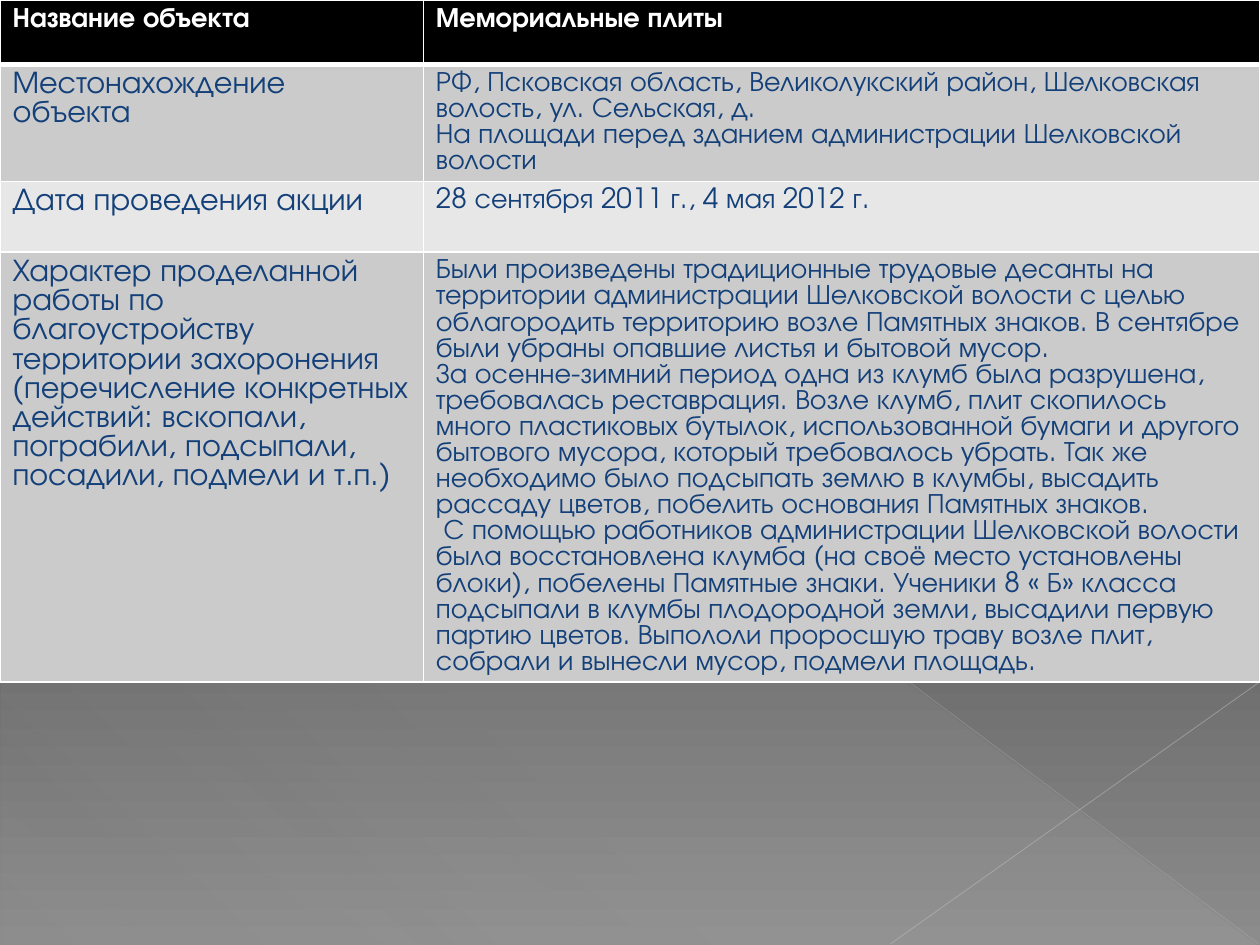
from lxml import etree
from pptx import Presentation
from pptx.dml.color import RGBColor
from pptx.enum.shapes import MSO_CONNECTOR, MSO_SHAPE
from pptx.oxml.ns import qn
from pptx.util import Inches, Pt

RIGHT_TRIANGLE = MSO_SHAPE.RIGHT_TRIANGLE
STRAIGHT = MSO_CONNECTOR.STRAIGHT

WHITE = RGBColor(0xFF, 0xFF, 0xFF)
BLACK = RGBColor(0x00, 0x00, 0x00)
NAVY = RGBColor(0x14, 0x40, 0x7A)
BAND_DARK = RGBColor(0xCB, 0xCB, 0xCB)
BAND_LIGHT = RGBColor(0xE7, 0xE7, 0xE7)
LINE_LONG = RGBColor(0xBF, 0xBF, 0xBF)
LINE_SHORT = RGBColor(0xC6, 0xC6, 0xC6)
TRIANGLE = RGBColor(0xD2, 0xD2, 0xD2)
GRAY_TOP = RGBColor(0x4A, 0x4A, 0x4A)
GRAY_MIDDLE = RGBColor(0x62, 0x62, 0x62)
GRAY_BOTTOM = RGBColor(0x8C, 0x8C, 0x8C)

COLUMN_WIDTHS = (3.36, 6.64)
ROW_HEIGHTS = (0.51, 0.93, 0.56, 3.41)
ROW_FILLS = (BLACK, BAND_DARK, BAND_LIGHT, BAND_DARK)
LABEL_SIZE = 18
BODY_SIZE = 16
LINE_RATIO = 0.93

ROWS = (
    ("Название объекта", ["Мемориальные плиты"]),
    ("Местонахождение объекта", [
        "РФ, Псковская область, Великолукский район, Шелковская волость, "
        "ул. Сельская, д.",
        "На площади перед зданием администрации Шелковской волости",
    ]),
    ("Дата проведения акции", ["28 сентября 2011 г., 4 мая 2012 г."]),
    ("Характер проделанной работы по благоустройству территории захоронения "
     "(перечисление конкретных действий: вскопали, пограбили, подсыпали, "
     "посадили, подмели и т.п.)", [
        "Были произведены традиционные трудовые десанты на территории "
        "администрации Шелковской волости с целью облагородить территорию "
        "возле Памятных знаков. В сентябре были убраны опавшие листья и "
        "бытовой мусор.\n"
        "За осенне-зимний период одна из клумб была разрушена, требовалась "
        "реставрация. Возле клумб, плит скопилось много пластиковых бутылок, "
        "использованной бумаги и другого бытового мусора, который требовалось "
        "убрать. Так же необходимо было подсыпать землю в клумбы, высадить "
        "рассаду цветов, побелить основания Памятных знаков.",
        " С помощью работников администрации Шелковской волости была "
        "восстановлена клумба (на своё место установлены блоки), побелены "
        "Памятные знаки. Ученики 8 « Б» класса подсыпали в клумбы плодородной "
        "земли, высадили первую партию цветов. Выпололи проросшую траву возле "
        "плит, собрали и вынесли мусор, подмели площадь.",
    ]),
)


def add_color(parent, color, opacity=100):
    element = etree.SubElement(parent, qn("a:srgbClr"), val=str(color))
    if opacity < 100:
        etree.SubElement(element, qn("a:alpha"), val=str(opacity * 1000))


class SlideBuilder:
    font_name = "TeX Gyre Adventor"

    def __init__(self, slide):
        self.slide = slide

    def gradient(self, fill, fill_parent, stops, angle):
        fill.gradient()
        gradient = fill_parent.find(qn("a:gradFill"))
        for child in list(gradient):
            gradient.remove(child)
        stop_list = etree.SubElement(gradient, qn("a:gsLst"))
        for position, color, opacity in stops:
            stop = etree.SubElement(stop_list, qn("a:gs"), pos=str(position * 1000))
            add_color(stop, color, opacity)
        etree.SubElement(gradient, qn("a:lin"), ang=str(angle * 60000), scaled="0")

    def background(self, stops, angle):
        fill = self.slide.background.fill
        fill.gradient()
        properties = self.slide.element.find(".//" + qn("p:bgPr"))
        self.gradient(fill, properties, stops, angle)

    def triangle(self, left, top, width, height, stops, angle):
        shape = self.slide.shapes.add_shape(
            RIGHT_TRIANGLE, Inches(left), Inches(top), Inches(width), Inches(height))
        shape.shadow.inherit = False
        shape.line.fill.background()
        self.gradient(shape.fill, shape.element.spPr, stops, angle)

    def line(self, start, end, color, width, opacity):
        connector = self.slide.shapes.add_connector(
            STRAIGHT, *(Inches(value) for value in start + end))
        connector.line.width = Pt(width)
        connector.line.color.rgb = color
        properties = connector.element.spPr
        color_element = properties.find(".//" + qn("a:srgbClr"))
        etree.SubElement(color_element, qn("a:alpha"), val=str(opacity * 1000))
        etree.SubElement(properties, qn("a:effectLst"))

    def borders(self, cell, widths):
        properties = cell._tc.get_or_add_tcPr()
        for side, width in zip("LRTB", widths):
            border = etree.SubElement(properties, qn("a:ln" + side), w=str(Pt(width)))
            add_color(etree.SubElement(border, qn("a:solidFill")), WHITE)

    def cell(self, cell, paragraphs, size, color, bold, fill, border_widths):
        self.borders(cell, border_widths)
        cell.fill.solid()
        cell.fill.fore_color.rgb = fill
        frame = cell.text_frame
        for index, text in enumerate(paragraphs):
            paragraph = frame.add_paragraph() if index else frame.paragraphs[0]
            paragraph.line_spacing = Pt(round(size * LINE_RATIO, 1))
            for part_index, part in enumerate(text.split("\n")):
                if part_index:
                    paragraph.add_line_break()
                run = paragraph.add_run()
                run.text = part
                run.font.name = self.font_name
                run.font.size = Pt(size)
                run.font.bold = bold
                run.font.color.rgb = color

    def table(self, left, top, rows):
        table = self.slide.shapes.add_table(
            len(rows), len(COLUMN_WIDTHS), Inches(left), Inches(top),
            Inches(sum(COLUMN_WIDTHS)), Inches(sum(ROW_HEIGHTS))).table
        for column, width in zip(table.columns, COLUMN_WIDTHS):
            column.width = Inches(width)
        for index, (label, body) in enumerate(rows):
            table.rows[index].height = Inches(ROW_HEIGHTS[index])
            header = index == 0
            color = WHITE if header else NAVY
            border_widths = (1, 1, 3 if index == 1 else 1, 3 if header else 1)
            label_size = BODY_SIZE if header else LABEL_SIZE
            contents = (([label], label_size), (body, BODY_SIZE))
            for column, (paragraphs, size) in enumerate(contents):
                self.cell(table.cell(index, column), paragraphs, size, color,
                          header, ROW_FILLS[index], border_widths)


def main():
    presentation = Presentation()
    presentation.slide_width = Inches(10)
    presentation.slide_height = Inches(7.5)
    builder = SlideBuilder(presentation.slides.add_slide(presentation.slide_layouts[6]))
    builder.background(
        ((0, GRAY_TOP, 100), (60, GRAY_MIDDLE, 100), (100, GRAY_BOTTOM, 100)), 90)
    builder.triangle(
        0.01, 0.02, 9.98, 7.48,
        ((0, TRIANGLE, 10), (70, TRIANGLE, 8), (100, TRIANGLE, 1)), 133)
    builder.line((0, 0.01), (9.99, 7.49), LINE_LONG, 0.39, 35)
    builder.line((10, 5.41), (7.07, 7.49), LINE_SHORT, 0.47, 45)
    builder.table(0, 0, ROWS)
    presentation.save("out.pptx")


if __name__ == "__main__":
    main()
